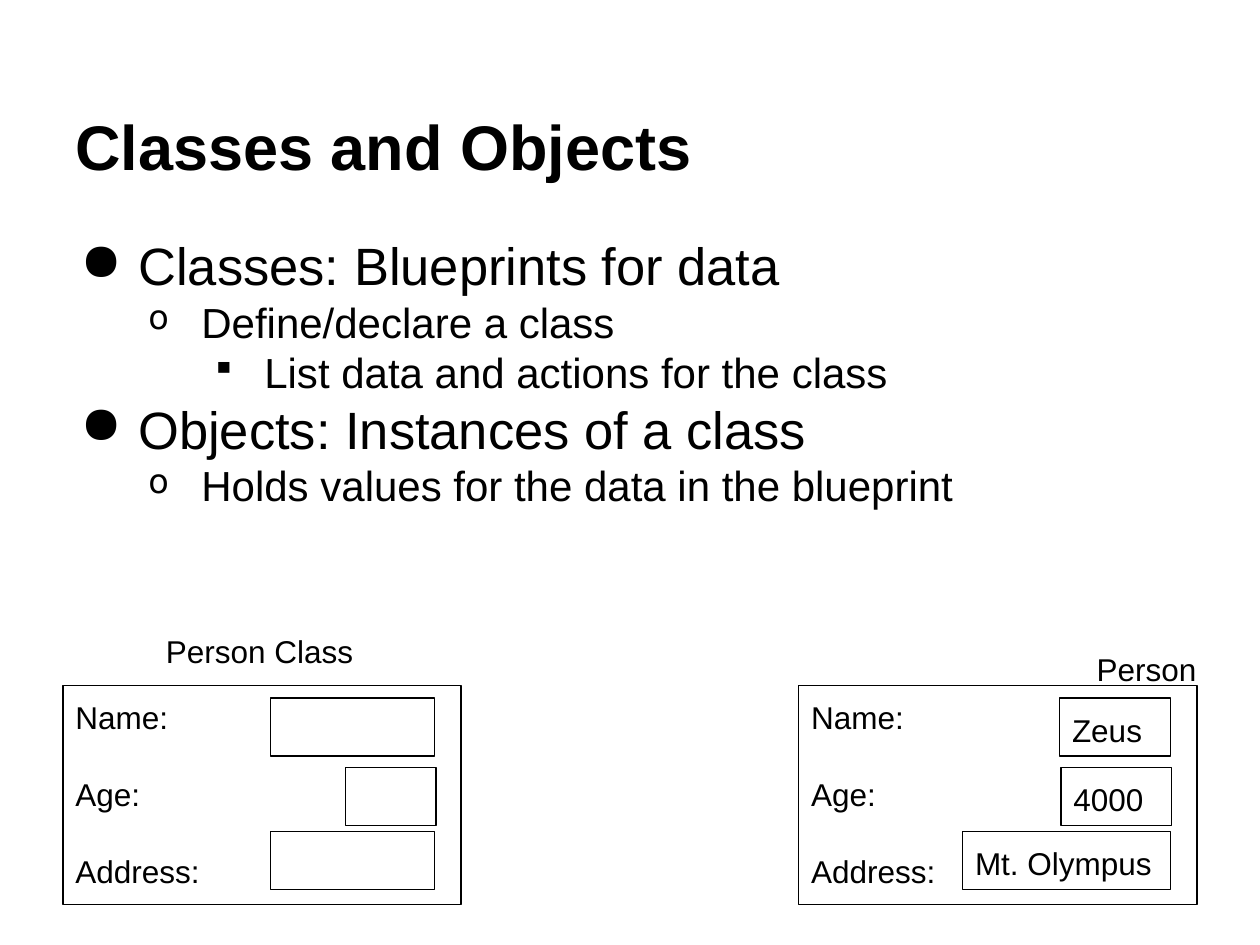
from lxml import etree
from pptx import Presentation
from pptx.dml.color import RGBColor
from pptx.enum import shapes, text
from pptx.oxml.ns import qn
from pptx.util import Inches, Pt

COLORS = {"ink": "000000", "paper": "FFFFFF"}
FONT = "Arial"

# Content
TITLE = "Classes and Objects"
OUTLINE = [  # level, wording
    (0, "Classes: Blueprints for data"),
    (1, "Define/declare a class"),
    (2, "List data and actions for the class"),
    (0, "Objects: Instances of a class"),
    (1, "Holds values for the data in the blueprint"),
]
LEVELS = [  # bullet, bullet size in percent, hanging indent, text size
    ("●", 100, 0.46, 30),
    ("o", 80, 0.42, 24),
    ("▪", 80, 0.42, 24),
]
FIELDS = ["Name:", "Age:", "Address:"]
CARDS = [  # card left, caption, caption place, fields as (left, width, value)
    (6.34, "Person", (8.6, 5.06, 1, 0.53),
     [(8.41, 0.88, "Zeus"), (8.42, 0.88, "4000"), (7.64, 1.65, "Mt. Olympus")]),
    (0.5, "Person Class", (0.66, 4.92, 2.8, 0.53),
     [(2.15, 1.3, ""), (2.74, 0.72, ""), (2.15, 1.3, "")]),
]
CARD_TOP, CARD_WIDTH, CARD_HEIGHT = 5.44, 3.16, 1.74
FIELD_TOPS, FIELD_HEIGHT = [5.54, 6.09, 6.6], 0.46


def color(name):
    return RGBColor.from_string(COLORS[name])


def write(box, lines, size=18, bold=False, anchor="TOP", **para_format):
    """Fill a box with one paragraph per line."""
    frame = box.text_frame
    frame_format = {"word_wrap": True, "vertical_anchor": getattr(text.MSO_ANCHOR, anchor)}
    for side in ("left", "right", "top", "bottom"):
        frame_format["margin_" + side] = Inches(0.1)
    for name, value in frame_format.items():
        setattr(frame, name, value)
    for number, line in enumerate(lines):
        para = frame.add_paragraph() if number else frame.paragraphs[0]
        para.alignment = text.PP_ALIGN.LEFT
        for name, value in para_format.items():
            if number or name != "space_before":
                setattr(para, name, value)
        span = para.add_run()
        span.text = line
        for name, value in {"name": FONT, "size": Pt(size), "bold": bold}.items():
            setattr(span.font, name, value)
        span.font.color.rgb = color("ink")
    return frame


def add_text(parent, place, lines, **options):
    return write(parent.add_textbox(*map(Inches, place)), lines, **options)


def add_frame(parent, place, lines, **options):
    """Draw an unfilled rectangle with a thin outline."""
    box = parent.add_shape(shapes.MSO_SHAPE.RECTANGLE, *map(Inches, place))
    box.shadow.inherit = False
    box.fill.background()
    box.line.color.rgb = color("ink")
    box.line.width = Pt(0.75)
    write(box, lines, **options)


def add_bullet(para, level):
    mark, percent, hang, size = LEVELS[level]
    para.level = level
    para.runs[0].font.size = Pt(size)
    props = para._p.get_or_add_pPr()
    props.set("marL", str(Inches(0.5 * (level + 1))))
    props.set("indent", str(-Inches(hang)))
    tint = etree.SubElement(props, qn("a:buClr"))
    etree.SubElement(tint, qn("a:srgbClr"), val=COLORS["ink"])
    etree.SubElement(props, qn("a:buSzPct"), val=str(percent * 1000))
    etree.SubElement(props, qn("a:buChar"), char=mark)


deck = Presentation()
deck.slide_width, deck.slide_height = Inches(10), Inches(7.5)
page = deck.slides.add_slide(deck.slide_layouts[6])
page.background.fill.solid()
page.background.fill.fore_color.rgb = color("paper")

# Title and outline
add_text(page.shapes, (0.5, 0.3, 9, 1.25), [TITLE], size=36, bold=True, anchor="BOTTOM")
outline = add_text(page.shapes, (0.5, 1.75, 9, 5.43), [line for _, line in OUTLINE])
for para, (level, _) in zip(outline.paragraphs, OUTLINE):
    add_bullet(para, level)

# Cards: outer frame, field boxes, caption
for left, caption, caption_place, values in CARDS:
    card = page.shapes.add_group_shape().shapes
    add_frame(card, (left, CARD_TOP, CARD_WIDTH, CARD_HEIGHT), FIELDS, space_before=Pt(22.5))
    for top, (field_left, width, value) in zip(FIELD_TOPS, values):
        add_frame(card, (field_left, top, width, FIELD_HEIGHT), [value] if value else [])
    add_text(card, caption_place, [caption], alignment=text.PP_ALIGN.CENTER)

deck.save("out.pptx")
